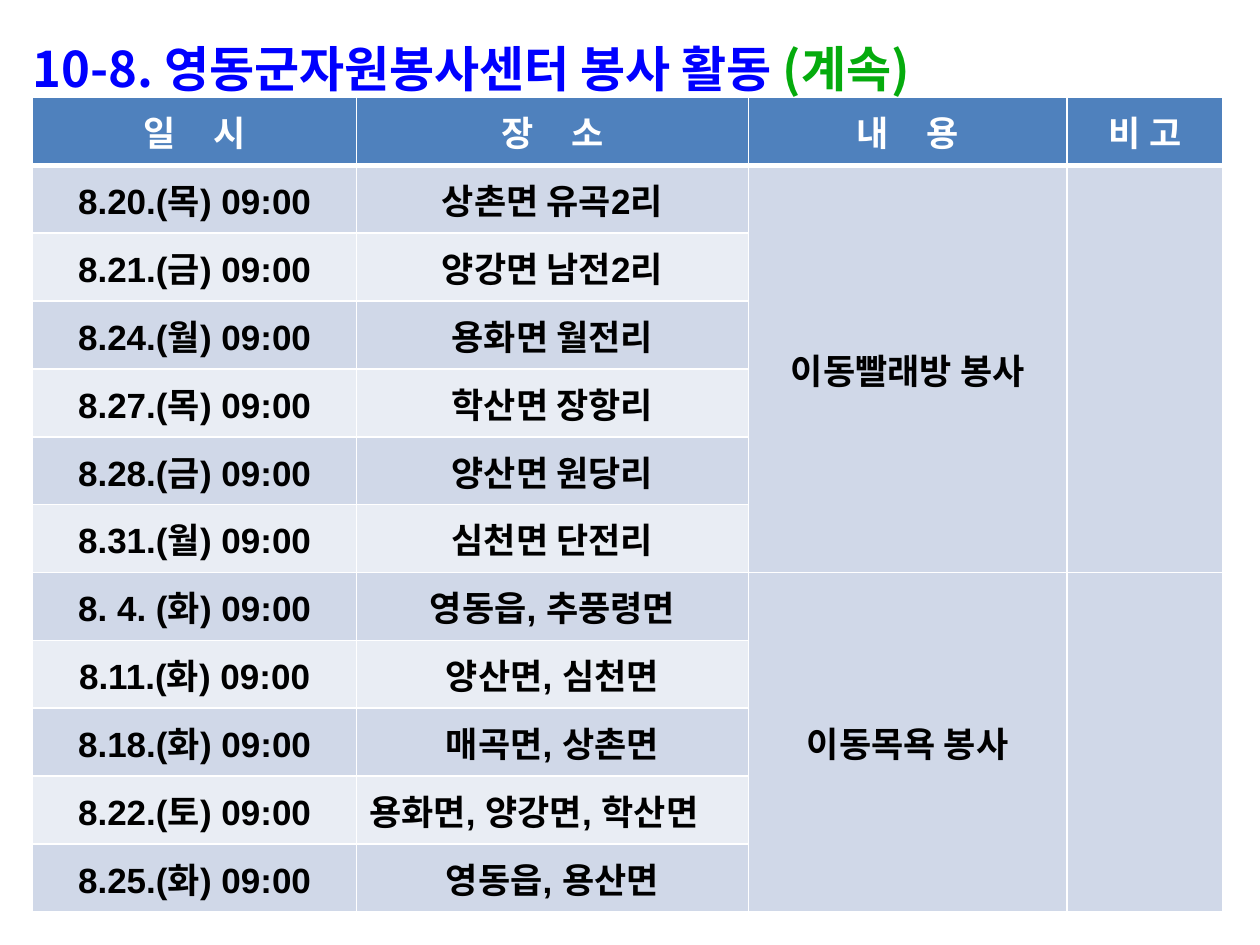
from lxml import etree
from pptx import Presentation
from pptx.dml.color import RGBColor
from pptx.enum.text import MSO_ANCHOR, MSO_AUTO_SIZE, PP_ALIGN
from pptx.oxml.ns import qn
from pptx.util import Pt

LEFT, CENTER = PP_ALIGN.LEFT, PP_ALIGN.CENTER
TOP, MIDDLE = MSO_ANCHOR.TOP, MSO_ANCHOR.MIDDLE
NO_AUTOFIT = MSO_AUTO_SIZE.NONE
TITLE_ONLY = 5
LATIN, HANGUL = "Arial", "Noto Sans CJK KR"
COLORS = {
    "title": "0000FF", "continued": "05AB0D", "header": "4F81BD",
    "odd": "D0D8E8", "even": "E9EDF4", "white": "FFFFFF", "black": "000000",
}
COLUMN_WIDTHS = (185, 224, 182, 89.3)
ROW_HEIGHT = 38.8
HEADER_GAP = 16.7
HEADERS = ("일 시", "장 소", "내 용", "비 고")
GROUPS = (
    ("이동빨래방 봉사", (
        ("8.20.(목) 09:00", "상촌면 유곡2리"),
        ("8.21.(금) 09:00", "양강면 남전2리"),
        ("8.24.(월) 09:00", "용화면 월전리"),
        ("8.27.(목) 09:00", "학산면 장항리"),
        ("8.28.(금) 09:00", "양산면 원당리"),
        ("8.31.(월) 09:00", "심천면 단전리"),
    )),
    ("이동목욕 봉사", (
        ("8. 4. (화) 09:00", "영동읍, 추풍령면"),
        ("8.11.(화) 09:00", "양산면, 심천면"),
        ("8.18.(화) 09:00", "매곡면, 상촌면"),
        ("8.22.(토) 09:00", "용화면, 양강면, 학산면"),
        ("8.25.(화) 09:00", "영동읍, 용산면"),
    )),
)
LEFT_ALIGNED = "용화면, 양강면, 학산면"


def color(name):
    """Return the named colour."""
    return RGBColor.from_string(COLORS[name])


def add_run(paragraph, text, size, font_name, color_name, gap=0):
    """Add a bold run with Hangul font and optional letter gap in points."""
    run = paragraph.add_run()
    run.text = text
    font = run.font
    font.size, font.bold, font.name = Pt(size), True, font_name
    font.color.rgb = color(color_name)
    properties = run._r.get_or_add_rPr()
    etree.SubElement(properties, qn("a:ea")).set("typeface", HANGUL)
    if gap:
        properties.set("spc", str(round(gap * 100)))


def add_title(slide):
    """Fill and place the title placeholder."""
    title = slide.shapes.title
    title.left, title.top = Pt(11.5), Pt(1.4)
    title.width, title.height = Pt(675.4), Pt(234)
    frame = title.text_frame
    frame.word_wrap, frame.auto_size = False, NO_AUTOFIT
    frame.vertical_anchor = TOP
    frame.margin_left = frame.margin_right = Pt(7.2)
    frame.margin_top = frame.margin_bottom = Pt(3.6)
    paragraph = frame.paragraphs[0]
    paragraph.alignment, paragraph.line_spacing = LEFT, 1.5
    paragraph.space_before = Pt(0)
    add_run(paragraph, "10-8. 영동군자원봉사센터 봉사 활동", 28, HANGUL, "title")
    add_run(paragraph, " (계속)", 28, HANGUL, "continued")


def style_cell(cell, row_index):
    """Set the borders, band fill and anchor of a cell."""
    widths = {
        "lnL": 1, "lnR": 1,
        "lnT": 3 if row_index == 1 else 1,
        "lnB": 3 if row_index == 0 else 1,
    }
    properties = cell._tc.get_or_add_tcPr()
    for tag, width in widths.items():
        line = etree.SubElement(properties, qn(f"a:{tag}"), w=str(Pt(width)))
        fill = etree.SubElement(line, qn("a:solidFill"))
        etree.SubElement(fill, qn("a:srgbClr"), val=COLORS["white"])
    band = "odd" if row_index % 2 else "even"
    cell.fill.solid()
    cell.fill.fore_color.rgb = color(band if row_index else "header")
    cell.vertical_anchor = MIDDLE


def write_cell(cell, text, color_name="black"):
    """Write a line of text in a cell."""
    paragraph = cell.text_frame.paragraphs[0]
    paragraph.alignment = LEFT if text == LEFT_ALIGNED else CENTER
    add_run(paragraph, text, 20, LATIN, color_name)


def write_header(cell, text, gap):
    """Write a header whose two syllables are set apart."""
    paragraph = cell.text_frame.paragraphs[0]
    paragraph.alignment = CENTER
    first, last = text.split()
    for part, part_gap in ((first, 0), (" ", gap), (last, 0)):
        add_run(paragraph, part, 20, LATIN, "white", part_gap)


def add_schedule(slide):
    """Add the table of dates, places and activities."""
    row_count = 1 + sum(len(visits) for _, visits in GROUPS)
    frame = slide.shapes.add_table(
        row_count, len(HEADERS), Pt(18.7), Pt(55.7),
        Pt(sum(COLUMN_WIDTHS)), Pt(ROW_HEIGHT * row_count))
    table = frame.table
    for column, width in zip(table.columns, COLUMN_WIDTHS):
        column.width = Pt(width)
    for row_index, row in enumerate(table.rows):
        row.height = Pt(ROW_HEIGHT)
        for cell in row.cells:
            style_cell(cell, row_index)
    for column_index, header in enumerate(HEADERS):
        gap = HEADER_GAP if column_index < len(HEADERS) - 1 else 0
        write_header(table.cell(0, column_index), header, gap)
    start = 1
    for activity, visits in GROUPS:
        end = start + len(visits) - 1
        for column_index in (2, 3):
            table.cell(start, column_index).merge(table.cell(end, column_index))
        write_cell(table.cell(start, 2), activity)
        for row_index, visit in enumerate(visits, start):
            for column_index, text in enumerate(visit):
                write_cell(table.cell(row_index, column_index), text)
        start = end + 1


def main():
    """Build and save the slide."""
    presentation = Presentation()
    presentation.slide_width, presentation.slide_height = Pt(720), Pt(540)
    slide = presentation.slides.add_slide(presentation.slide_layouts[TITLE_ONLY])
    add_title(slide)
    add_schedule(slide)
    presentation.save("out.pptx")


if __name__ == "__main__":
    main()
